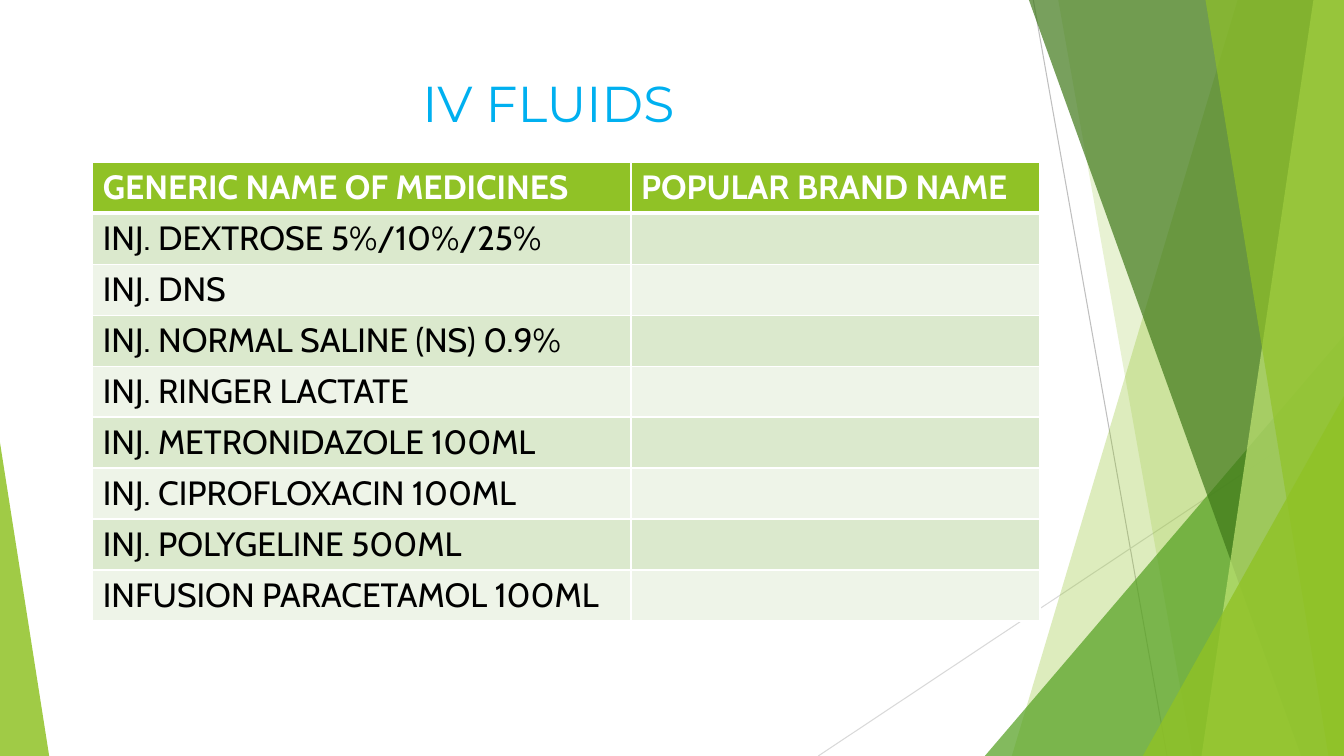
from dataclasses import dataclass

from lxml.etree import SubElement
from pptx import Presentation
from pptx.dml.color import RGBColor
from pptx.enum.shapes import MSO_CONNECTOR, MSO_SHAPE
from pptx.enum.text import MSO_ANCHOR, PP_ALIGN
from pptx.oxml.ns import qn
from pptx.util import Cm, Pt

TITLE = "IV FLUIDS"
HEADERS = ("GENERIC NAME OF MEDICINES", "POPULAR BRAND NAME")
MEDICINES = (
    "INJ. DEXTROSE 5%/10%/25%",
    "INJ. DNS",
    "INJ. NORMAL SALINE (NS) 0.9%",
    "INJ. RINGER LACTATE",
    "INJ. METRONIDAZOLE 100ML",
    "INJ. CIPROFLOXACIN 100ML",
    "INJ. POLYGELINE 500ML",
    "INFUSION PARACETAMOL 100ML",
)


@dataclass(frozen=True)
class Theme:
    title_font: str = "Montserrat"
    table_font: str = "Cabin"
    title_size: int = 36
    table_size: int = 24
    title: str = "00B0F0"
    white: str = "FFFFFF"
    black: str = "000000"
    green: str = "90C226"
    leaf: str = "54A021"
    forest: str = "3F7819"
    lime: str = "C0E474"
    row_dark: str = "DBE9CD"
    row_light: str = "EEF4E8"
    steep_line: str = "BFBFBF"
    shallow_line: str = "D9D9D9"


THEME = Theme()
WIDTH, HEIGHT = 33.87, 19.05
TITLE_BOX = (1.88, 1.7, 23.88, 3.15)
TABLE_LEFT, TABLE_TOP = 2.34, 4.09
COLUMN_WIDTHS = (13.56, 10.31)
ROW_HEIGHT = 1.27

LINES = (
    ((26.04, 0, 29.41, HEIGHT), THEME.steep_line),
    ((WIDTH, 10.24, 20.62, HEIGHT), THEME.shallow_line),
)
DECORATIONS = (
    ("band", (31.19, 25.5), THEME.green, 30),
    ("band", (26.67, 30.05), THEME.green, 20),
    ("triangle", (24.82, 8.46, WIDTH, 1), THEME.leaf, 72),
    ("band", (25.93, 32.79), THEME.forest, 70),
    ("band", (33.1, 30.28), THEME.lime, 70),
    ("band", (30.38, 33.48), THEME.green, 65),
    ("triangle", (28.8, 9.98, WIDTH, 1), THEME.green, 80),
    ("triangle", (0, 11.15, 1.24, 0), THEME.green, 85),
)


def color(value):
    return RGBColor.from_string(value)


def format_font(paragraph, name, size, value, bold=False):
    for run in paragraph.runs:
        run.font.name = name
        run.font.size = Pt(size)
        run.font.color.rgb = color(value)
        run.font.bold = bold


def add_line(slide, ends, value):
    line = slide.shapes.add_connector(
        MSO_CONNECTOR.STRAIGHT, *(Cm(position) for position in ends)
    )
    line.line.color.rgb = color(value)
    line.line.width = Pt(0.75)
    SubElement(line.element.spPr, qn("a:effectLst"))


def add_band(slide, top_left, bottom_left):
    builder = slide.shapes.build_freeform(Cm(top_left), 0)
    corners = ((WIDTH, 0), (WIDTH, HEIGHT), (bottom_left, HEIGHT))
    builder.add_line_segments([(Cm(x), Cm(y)) for x, y in corners], close=True)
    return builder.convert_to_shape()


def add_triangle(slide, left, top, right, apex):
    triangle = slide.shapes.add_shape(
        MSO_SHAPE.ISOSCELES_TRIANGLE,
        Cm(left), Cm(top), Cm(right - left), Cm(HEIGHT - top),
    )
    triangle.adjustments[0] = apex
    return triangle


def add_decorations(slide):
    for ends, value in LINES:
        add_line(slide, ends, value)
    builders = {"band": add_band, "triangle": add_triangle}
    for kind, geometry, value, opacity in DECORATIONS:
        shape = builders[kind](slide, *geometry)
        shape.shadow.inherit = False
        shape.line.fill.background()
        shape.fill.solid()
        shape.fill.fore_color.rgb = color(value)
        color_element = shape.element.spPr.find(qn("a:solidFill"))[0]
        SubElement(color_element, qn("a:alpha"), val=str(opacity * 1000))


def add_title(slide):
    title = slide.shapes.title
    title.left, title.top, title.width, title.height = map(Cm, TITLE_BOX)
    title.text_frame.text = TITLE
    title.text_frame.vertical_anchor = MSO_ANCHOR.TOP
    paragraph = title.text_frame.paragraphs[0]
    paragraph.alignment = PP_ALIGN.CENTER
    format_font(paragraph, THEME.title_font, THEME.title_size, THEME.title)


def add_borders(cell, bottom_width, top_width):
    properties = cell._tc.get_or_add_tcPr()
    widths = {"lnL": 1, "lnR": 1, "lnT": top_width, "lnB": bottom_width}
    for side, width in widths.items():
        border = SubElement(properties, qn(f"a:{side}"), w=str(Pt(width)))
        fill = SubElement(border, qn("a:solidFill"))
        SubElement(fill, qn("a:srgbClr"), val=THEME.white)


def add_medicine_table(slide):
    rows = [HEADERS] + [(medicine, "") for medicine in MEDICINES]
    table = slide.shapes.add_table(
        len(rows), len(HEADERS), Cm(TABLE_LEFT), Cm(TABLE_TOP),
        Cm(sum(COLUMN_WIDTHS)), Cm(ROW_HEIGHT * len(rows)),
    ).table
    for column, width in zip(table.columns, COLUMN_WIDTHS):
        column.width = Cm(width)
    for row_index, texts in enumerate(rows):
        header = row_index == 0
        table.rows[row_index].height = Cm(ROW_HEIGHT)
        stripe = THEME.row_dark if row_index % 2 else THEME.row_light
        for column_index, text in enumerate(texts):
            cell = table.cell(row_index, column_index)
            add_borders(cell, 3 if header else 1, 3 if row_index == 1 else 1)
            cell.fill.solid()
            cell.fill.fore_color.rgb = color(THEME.green if header else stripe)
            if text:
                cell.text_frame.text = text
                format_font(
                    cell.text_frame.paragraphs[0], THEME.table_font, THEME.table_size,
                    THEME.white if header else THEME.black, header,
                )


def main():
    presentation = Presentation()
    presentation.slide_width = Cm(WIDTH)
    presentation.slide_height = Cm(HEIGHT)
    slide = presentation.slides.add_slide(presentation.slide_layouts[5])
    add_decorations(slide)
    add_title(slide)
    add_medicine_table(slide)
    presentation.save("out.pptx")


if __name__ == "__main__":
    main()
